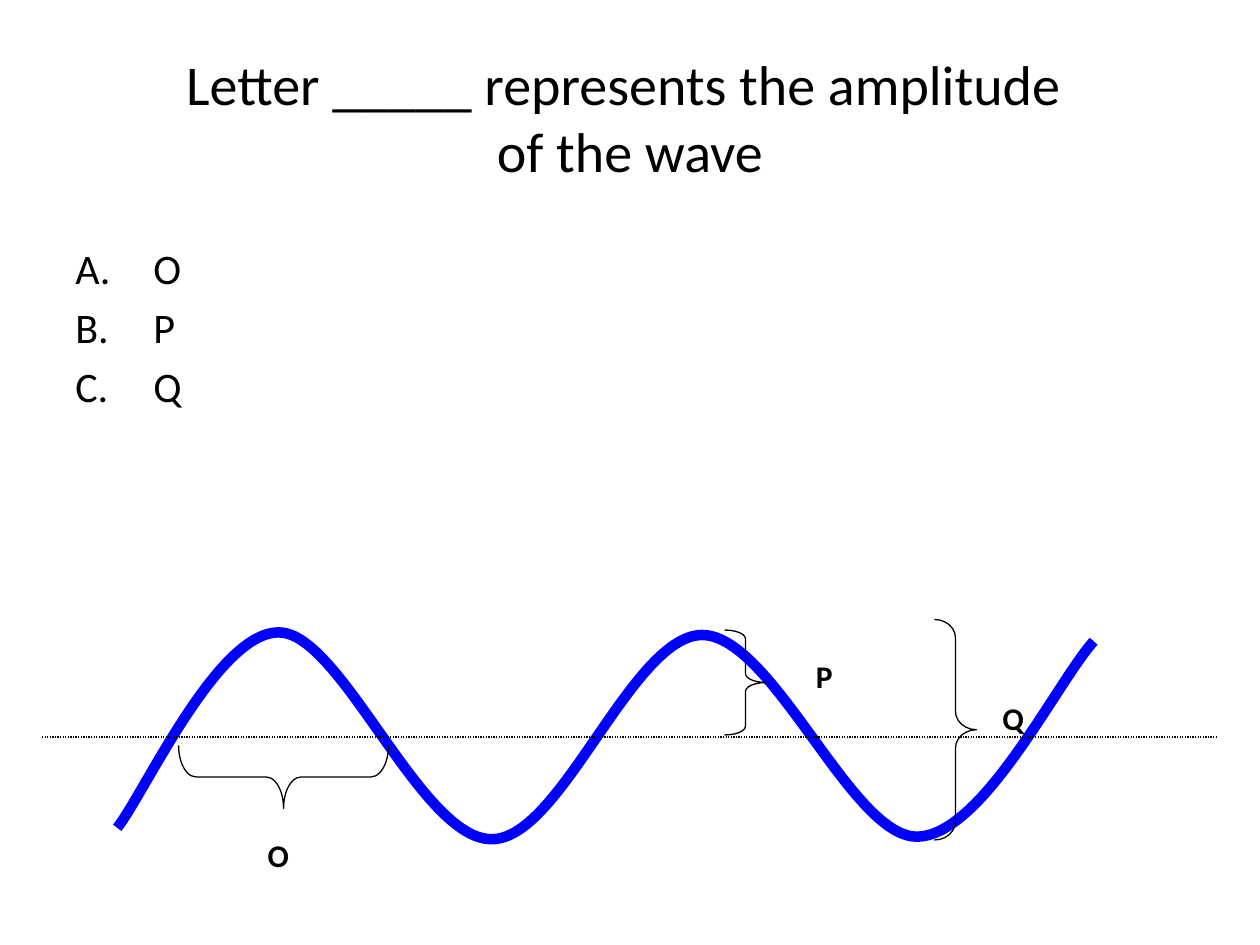
"""Build a quiz slide asking which letter marks the amplitude of a wave."""
from dataclasses import dataclass
from lxml.etree import SubElement
from pptx import Presentation
from pptx.dml.color import RGBColor
from pptx.enum.dml import MSO_LINE
from pptx.enum.shapes import MSO_CONNECTOR, MSO_SHAPE
from pptx.enum.text import MSO_ANCHOR, PP_ALIGN
from pptx.oxml.ns import qn
from pptx.util import Inches, Pt


@dataclass(frozen=True)
class Theme:
    font: str = "Calibri"
    ink: RGBColor = RGBColor(0, 0, 0)
    wave: RGBColor = RGBColor(0, 0, 255)
    question_size: int = 32
    answer_size: int = 24
    letter_size: int = 18
    thin: float = 0.75
    thick: float = 6


THEME = Theme()
COLUMNS, ROWS = 120, 90
CELL = Inches(10) / COLUMNS
HUNDREDTH = Inches(0.01)

QUESTION = "Letter _____ represents the amplitude \vof the wave"
QUESTION_AREA = (6, 3.6, 108, 15)
ANSWERS = ["O", "P", "Q"]
ANSWER_AREA = (6, 22.5, 47, 20.4)
ANSWER_INDENT = Inches(0.62)
LETTER_SIZE = (13, 4.8)
LETTERS = {"O": (20, 79), "P": (72, 62), "Q": (90, 66)}
BRACES = [
    ((24, 64, 6, 20), 0.278, 90),
    ((69, 60, 4, 10), 0.208, 0),
    ((89, 59, 4, 21), 0.438, 0),
]
REST_LINE = (4, 116, 70.2)
WAVE_START = (93, 657)
WAVE_CURVES = [
    ((114, 631), (173, 500), (222, 502)),
    ((271, 503), (334, 666), (390, 666)),
    ((445, 667), (501, 505), (557, 504)),
    ((613, 504), (675, 663), (727, 664)),
    ((779, 665), (839, 541), (868, 509)),
]


def cells(*counts):
    return [round(count * CELL) for count in counts]


def stroke(line, color, width):
    line.color.rgb = color
    line.width = Pt(width)


def add_text(slide, area, paragraphs, size, align=PP_ALIGN.CENTER, bold=False):
    frame = slide.shapes.add_textbox(*cells(*area)).text_frame
    frame.word_wrap = True
    frame.text = "\n".join(paragraphs)
    for paragraph in frame.paragraphs:
        paragraph.alignment = align
        font = paragraph.font
        font.name, font.size, font.bold = THEME.font, Pt(size), bold
        font.color.rgb = THEME.ink
    return frame


def add_wave(slide):
    ends = [curve[-1] for curve in WAVE_CURVES]
    builder = slide.shapes.build_freeform(*WAVE_START, scale=HUNDREDTH)
    builder.add_line_segments(ends, close=False)
    wave = builder.convert_to_shape()
    wave.fill.background()
    wave.shadow.inherit = False
    stroke(wave.line, THEME.wave, THEME.thick)
    left = min(x for x, y in [WAVE_START, *ends])
    top = min(y for x, y in [WAVE_START, *ends])
    segments = list(wave.element.iter(qn("a:lnTo")))
    for segment, curve in zip(segments, WAVE_CURVES):
        outline = segment.getparent()
        outline.remove(segment)
        bend = SubElement(outline, qn("a:cubicBezTo"))
        for x, y in curve:
            SubElement(bend, qn("a:pt"), x=str(x - left), y=str(y - top))


def add_rest_line(slide):
    start, end, level = cells(*REST_LINE)
    rest = slide.shapes.add_connector(MSO_CONNECTOR.STRAIGHT, start, level, end, level)
    stroke(rest.line, THEME.ink, THEME.thin)
    rest.line.dash_style = MSO_LINE.ROUND_DOT
    SubElement(rest.element.spPr, qn("a:effectLst"))


def add_brace(slide, area, curl, turn):
    brace = slide.shapes.add_shape(MSO_SHAPE.RIGHT_BRACE, *cells(*area))
    brace.adjustments[0] = curl
    brace.rotation = turn
    brace.fill.background()
    brace.shadow.inherit = False
    stroke(brace.line, THEME.ink, THEME.thin)


def add_answers(slide):
    answers = add_text(slide, ANSWER_AREA, ANSWERS, THEME.answer_size, PP_ALIGN.LEFT)
    for answer in answers.paragraphs:
        answer.space_before = Pt(0.2 * THEME.answer_size)
        properties = answer._p.get_or_add_pPr()
        properties.set("marL", str(ANSWER_INDENT))
        properties.set("indent", str(-ANSWER_INDENT))
        numbering = properties.makeelement(qn("a:buAutoNum"), type="alphaUcPeriod")
        properties.find(qn("a:defRPr")).addprevious(numbering)


def main():
    deck = Presentation()
    deck.slide_width, deck.slide_height = cells(COLUMNS, ROWS)
    slide = deck.slides.add_slide(deck.slide_layouts[6])
    question = add_text(slide, QUESTION_AREA, [QUESTION], THEME.question_size)
    question.vertical_anchor = MSO_ANCHOR.MIDDLE
    add_wave(slide)
    add_rest_line(slide)
    for brace in BRACES:
        add_brace(slide, *brace)
    for letter, corner in LETTERS.items():
        add_text(slide, corner + LETTER_SIZE, [letter], THEME.letter_size, bold=True)
    add_answers(slide)
    deck.save("out.pptx")


if __name__ == "__main__":
    main()
